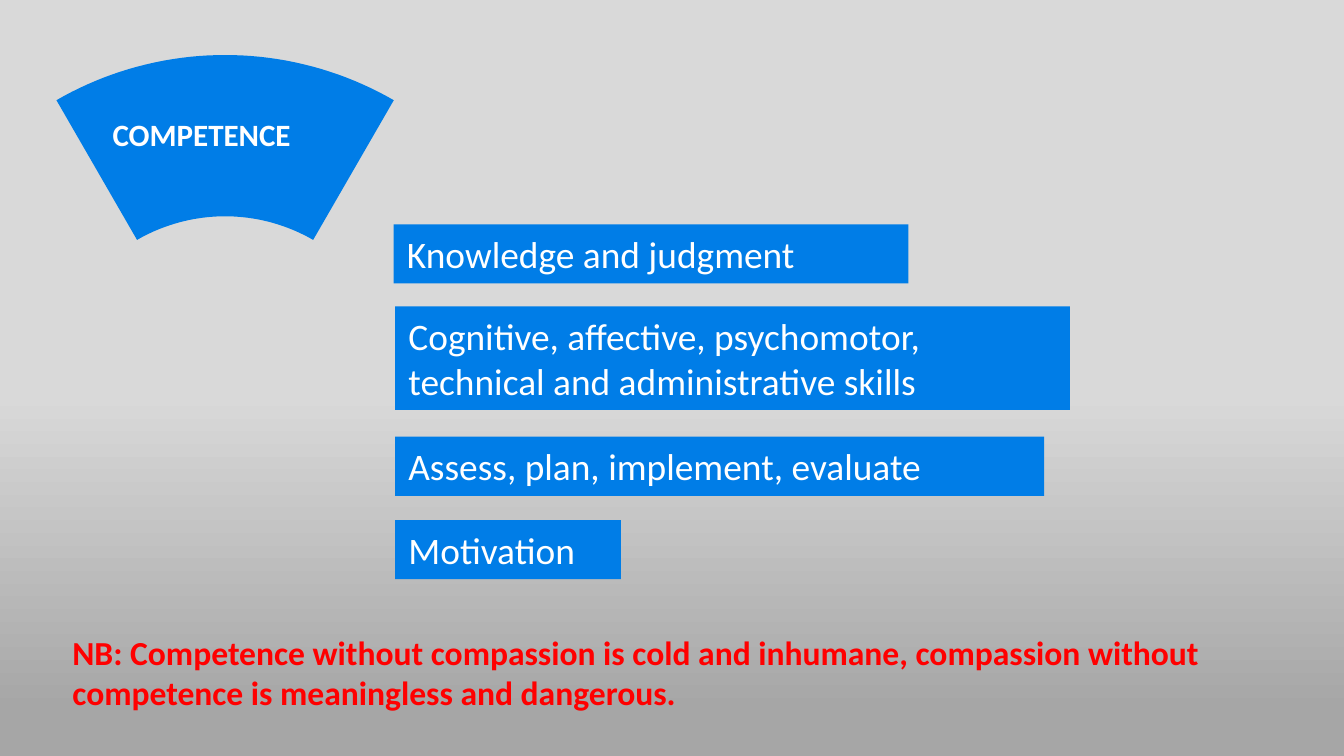
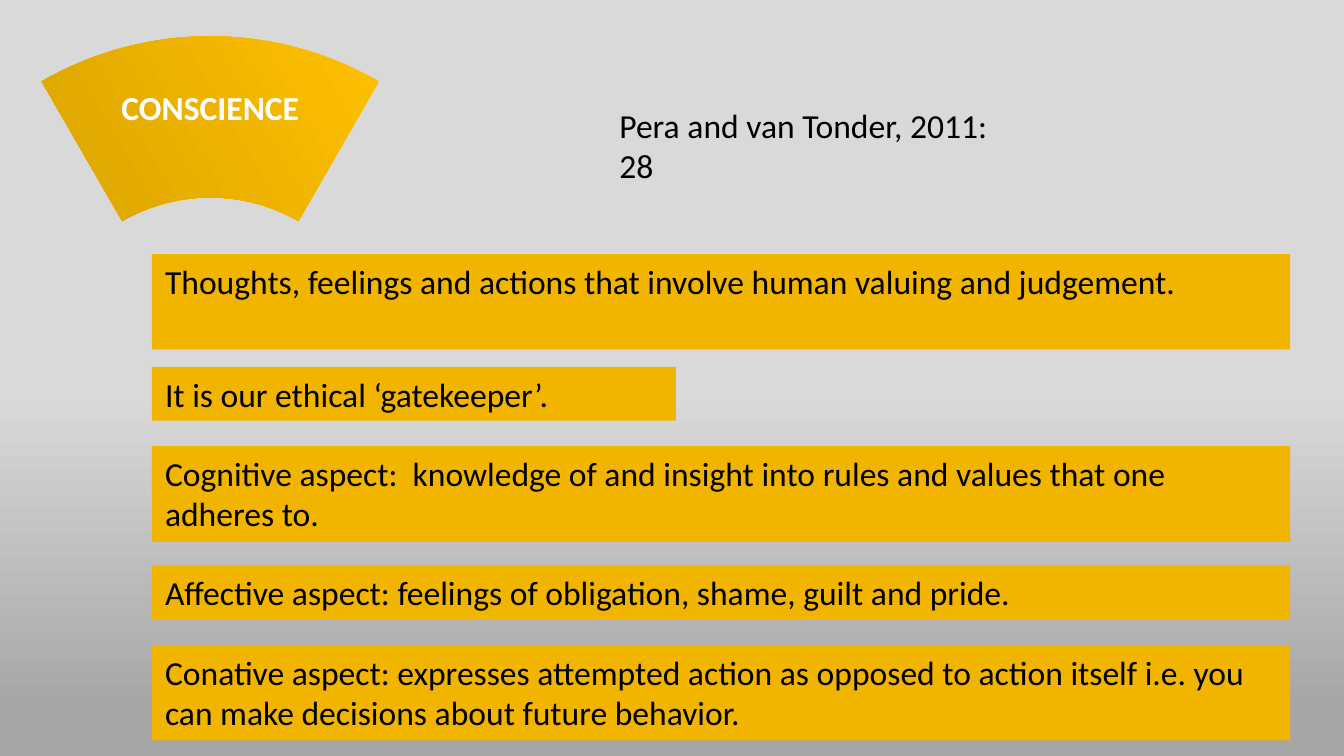
import copy
import dataclasses
import math

import pptx
import pptx.dml.color
import pptx.enum.shapes
import pptx.enum.text
import pptx.util

Inches = pptx.util.Inches
Align = pptx.enum.text.PP_ALIGN


@dataclasses.dataclass(frozen=True)
class Theme:
    """Colours, gradients and type sizes shared by the slides."""

    font: str = "Calibri"
    blue: str = "007DE7"
    amber: str = "F1B500"
    white: str = "FFFFFF"
    black: str = "000000"
    red: str = "FF0000"
    backdrop: tuple = ((0, "D9D9D9"), (0.52, "D9D9D9"), (0.94, "A6A6A6"), (1, "A6A6A6"))
    amber_fade: tuple = ((0, "FFC000"), (1, "DBA500"))
    label_size: float = 16.6
    body_size: float = 18
    large_size: float = 20


@dataclasses.dataclass(frozen=True)
class Box:
    """A rectangle in inches."""

    left: float
    top: float
    width: float
    height: float

    def inside(self, left, top, width, height):
        """Return a box placed relative to this one."""
        return Box(self.left + left, self.top + top, width, height)

    def lengths(self):
        """Return the four measures as lengths."""
        return [Inches(value) for value in dataclasses.astuple(self)]


THEME = Theme()
PAGE = Box(0, 0, 10, 10 * 9 / 16)
OUTER_RADIUS = 2.51
INNER_RADIUS = 1.31
FAN_HEIGHT = OUTER_RADIUS - INNER_RADIUS * math.cos(math.pi / 6)


def colour(code):
    """Turn a hex code into a colour."""
    return pptx.dml.color.RGBColor.from_string(code)


def fill_gradient(fill, owner, stops, angle):
    """Fill with a linear gradient whose angle runs counter-clockwise."""
    fill.gradient()
    fill.gradient_angle = angle
    stop_list = owner.xpath(".//a:gsLst")[0]
    while len(stop_list) < len(stops):
        stop_list.append(copy.deepcopy(stop_list[0]))
    for stop, (position, code) in zip(fill.gradient_stops, stops):
        stop.position = position
        stop.color.rgb = colour(code)


def write(shape, text, size, code, bold=False, align=Align.LEFT):
    """Put one formatted paragraph into a shape."""
    frame = shape.text_frame
    frame.text = text
    frame.word_wrap = True
    frame.vertical_anchor = pptx.enum.text.MSO_ANCHOR.TOP
    para = frame.paragraphs[0]
    para.alignment = align
    for span in para.runs:
        span.font.name = THEME.font
        span.font.size = pptx.util.Pt(size)
        span.font.bold = bold
        span.font.color.rgb = colour(code)


def add_text(shapes, box, text, size, code, **style):
    """Add a text box."""
    write(shapes.add_textbox(*box.lengths()), text, size, code, **style)


def add_bar(shapes, box, text, size, fill_code, text_code, **style):
    """Add a flat coloured bar with text."""
    bar = shapes.add_shape(pptx.enum.shapes.MSO_SHAPE.RECTANGLE, *box.lengths())
    bar.shadow.inherit = False
    bar.fill.solid()
    bar.fill.fore_color.rgb = colour(fill_code)
    bar.line.fill.background()
    write(bar, text, size, text_code, **style)


def arc(box, radius, steps=40):
    """Return points from left to right along a sixty-degree arc."""
    angles = [math.radians(-30 + 60 * step / steps) for step in range(steps + 1)]
    return [
        (
            Inches(box.left + OUTER_RADIUS / 2 + radius * math.sin(angle)),
            Inches(box.top + OUTER_RADIUS - radius * math.cos(angle)),
        )
        for angle in angles
    ]


def add_fan(page, box):
    """Add a fan-shaped heading and return its group and outline shape."""
    group = page.shapes.add_group_shape()
    outline = arc(box, OUTER_RADIUS) + arc(box, INNER_RADIUS)[::-1]
    builder = group.shapes.build_freeform(*outline[0])
    builder.add_line_segments(outline[1:], close=True)
    fan = builder.convert_to_shape()
    fan.shadow.inherit = False
    fan.line.fill.background()
    return group, fan


def add_page(deck):
    """Add a blank page with the shared backdrop."""
    page = deck.slides.add_slide(deck.slide_layouts[6])
    fill_gradient(page.background.fill, page.element, THEME.backdrop, 270)
    return page


def competence_page(deck, area):
    """Build the slide on competence."""
    page = add_page(deck)
    fan_box = area.inside(0.42, 0.41, OUTER_RADIUS, FAN_HEIGHT)
    group, fan = add_fan(page, fan_box)
    fan.fill.solid()
    fan.fill.fore_color.rgb = colour(THEME.blue)
    label_box = fan_box.inside(0.32, 0.4, 1.9, 0.35)
    add_bar(group.shapes, label_box, "COMPETENCE", THEME.label_size, THEME.blue, THEME.white, bold=True)
    bars = (
        (2.93, 1.67, 3.83, 0.44, "Knowledge and judgment"),
        (2.94, 2.28, 5.02, 0.77, "Cognitive, affective, psychomotor, technical and administrative skills"),
        (2.94, 3.25, 4.83, 0.44, "Assess, plan, implement, evaluate"),
        (2.94, 3.87, 1.68, 0.44, "Motivation"),
    )
    for *place, text in bars:
        add_bar(page.shapes, area.inside(*place), text, THEME.large_size, THEME.blue, THEME.white)
    note = (
        "NB: Competence without compassion is cold and inhumane, "
        "compassion without competence is meaningless and dangerous."
    )
    add_text(page.shapes, area.inside(0.44, 4.65, 9.38, 0.57), note, THEME.body_size, THEME.red, bold=True)


def conscience_page(deck, area):
    """Build the slide on conscience."""
    page = add_page(deck)
    fan_box = area.inside(0.31, 0.27, OUTER_RADIUS, FAN_HEIGHT)
    group, fan = add_fan(page, fan_box)
    fill_gradient(fan.fill, fan.element, THEME.amber_fade, 210)
    label_box = fan_box.inside(0.16, 0.33, 2.19, 0.3)
    add_text(
        group.shapes, label_box, "CONSCIENCE", THEME.body_size, THEME.white,
        bold=True, align=Align.CENTER,
    )
    source_box = area.inside(4.51, 0.73, 3.08, 0.34)
    add_text(page.shapes, source_box, "Pera and van Tonder, 2011: 28", THEME.body_size, THEME.black)
    bars = (
        (1.89, 8.47, 0.71, "Thoughts, feelings and actions that involve human valuing and judgement."),
        (2.73, 3.9, 0.4, "It is our ethical ‘gatekeeper’."),
        (3.32, 8.47, 0.71,
         "Cognitive aspect:  knowledge of and insight into rules and values that one adheres to."),
        (4.21, 8.47, 0.4, "Affective aspect: feelings of obligation, shame, guilt and pride."),
        (4.8, 8.47, 0.71,
         "Conative aspect: expresses attempted action as opposed to action itself "
         "i.e. you can make decisions about future behavior."),
    )
    for top, width, height, text in bars:
        bar_box = area.inside(1.13, top, width, height)
        add_bar(page.shapes, bar_box, text, THEME.body_size, THEME.amber, THEME.black)


def main():
    """Build and save the deck."""
    deck = pptx.Presentation()
    deck.slide_width = Inches(PAGE.width)
    deck.slide_height = Inches(PAGE.height)
    competence_page(deck, PAGE)
    conscience_page(deck, PAGE)
    deck.save("out.pptx")


if __name__ == "__main__":
    main()
